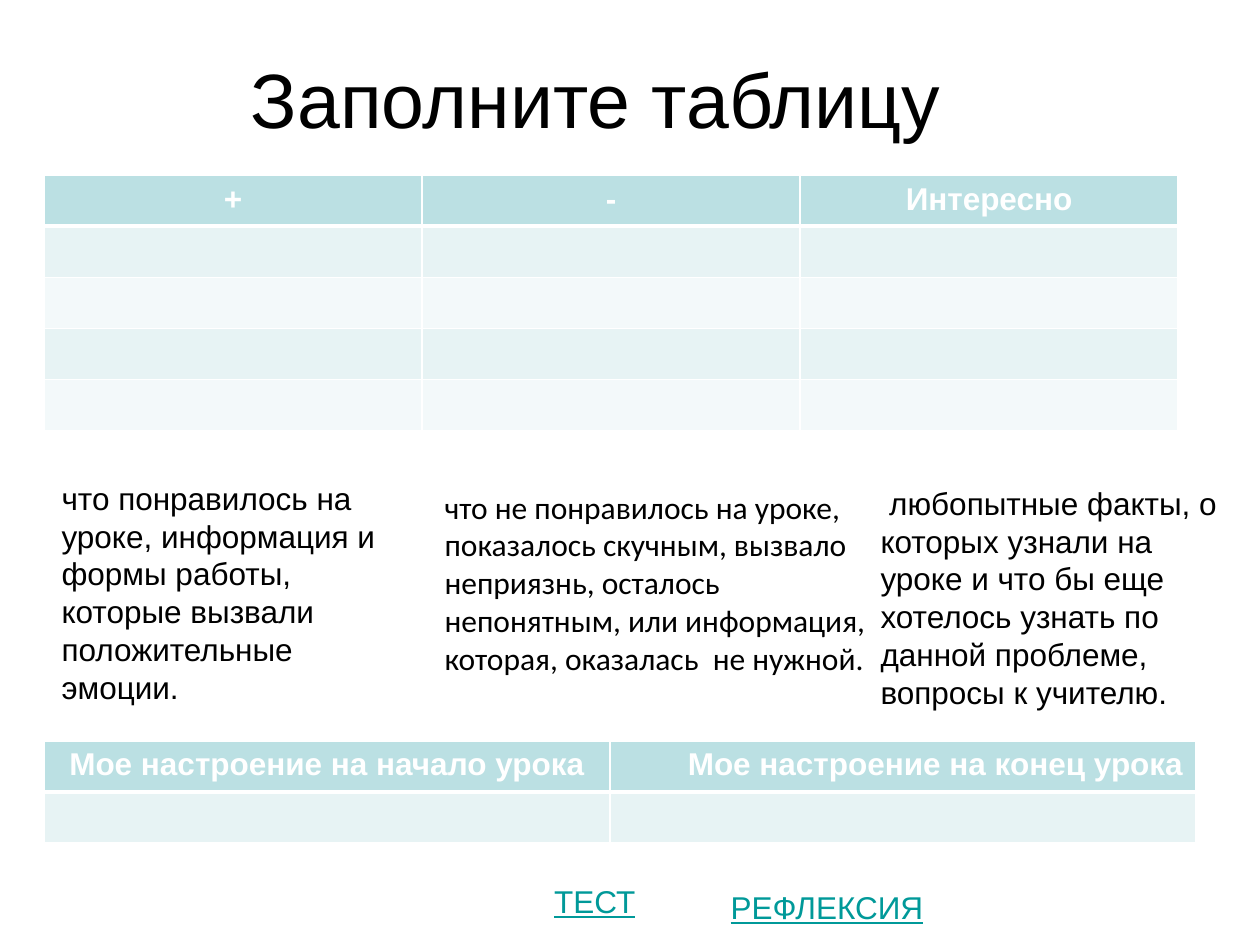
"""Builds a lesson reflection slide with two tables to fill in."""
import pptx
import pptx.util
import pptx.dml.color
import pptx.enum.text
import pptx.oxml
import pptx.oxml.ns

Inches = pptx.util.Inches
ALIGN = pptx.enum.text.PP_ALIGN
ANCHOR = pptx.enum.text.MSO_ANCHOR


def rgb(value):
    return pptx.dml.color.RGBColor.from_string(value)


class Deck:
    font = "Arial"
    size = 18
    text_color = "000000"
    link_color = "009999"
    line_color = "FFFFFF"
    header_fill = "BBE0E3"
    band_fills = ("E7F3F4", "F3F9FA")

    def __init__(self):
        self.prs = pptx.Presentation()
        self.prs.slide_width, self.prs.slide_height = Inches(10), Inches(7.5)
        self.s = self.prs.slides.add_slide(self.prs.slide_layouts[5])

    def style(self, p, color, font=None, size=None, bold=False, underline=False, align=ALIGN.LEFT):
        p.alignment = align
        f = p.font
        f.name, f.size = font or self.font, pptx.util.Pt(size or self.size)
        f.bold, f.underline = bold, underline
        f.color.rgb = rgb(color)

    def title(self, text, x, y, w, h):
        sp = self.s.shapes.title
        sp.left, sp.top, sp.width, sp.height = map(Inches, (x, y, w, h))
        tf = sp.text_frame
        tf.vertical_anchor = ANCHOR.MIDDLE
        tf.auto_size = pptx.enum.text.MSO_AUTO_SIZE.NONE
        tf.text = text
        self.style(tf.paragraphs[0], self.text_color, size=44, align=ALIGN.CENTER)

    def text(self, text, x, y, w, h, font=None):
        tf = self.s.shapes.add_textbox(*map(Inches, (x, y, w, h))).text_frame
        tf.word_wrap = True
        tf.text = text
        self.style(tf.paragraphs[0], self.text_color, font)

    def link(self, text, x, y, w):
        tf = self.s.shapes.add_textbox(*map(Inches, (x, y, w, 0.4))).text_frame
        tf.word_wrap = False
        tf.text = text
        self.style(tf.paragraphs[0], self.link_color, underline=True)

    def borders(self, cell, widths):
        tc_pr = cell._tc.get_or_add_tcPr()
        for side, width in widths.items():
            tc_pr.append(pptx.oxml.parse_xml(
                f'<a:ln{side} {pptx.oxml.ns.nsdecls("a")} w="{pptx.util.Pt(width)}"><a:solidFill>'
                f'<a:srgbClr val="{self.line_color}"/></a:solidFill></a:ln{side}>'))

    def table(self, headers, aligns, x, y, widths, rows, row_h=0.405):
        frame = self.s.shapes.add_table(rows, len(widths), Inches(x), Inches(y),
                                        Inches(sum(widths)), Inches(rows * row_h))
        table = frame.table
        for column, width in zip(table.columns, widths):
            column.width = Inches(width)
        for i, row in enumerate(table.rows):
            row.height = Inches(row_h)
            for j, cell in enumerate(row.cells):
                header = i == 0
                self.borders(cell, {"L": 1, "R": 1, "T": 3 if i == 1 else 1, "B": 3 if header else 1})
                cell.fill.solid()
                cell.fill.fore_color.rgb = rgb(self.header_fill if header else self.band_fills[(i - 1) % 2])
                if header:
                    cell.text = headers[j]
                    self.style(cell.text_frame.paragraphs[0], self.line_color, bold=True, align=aligns[j])


def main():
    deck = Deck()
    deck.title("Заполните таблицу\v", 0.23, 0.52, 9, 1.25)
    deck.table(("+", "-", "Интересно"), (ALIGN.CENTER,) * 3, 0.35, 1.39, (3, 3, 3), 5)
    deck.text("что не понравилось на уроке, показалось скучным, вызвало неприязнь, осталось "
              "непонятным, или информация, которая, оказалась  не нужной.",
              3.43, 3.82, 3.62, 1.62, "Calibri")
    deck.text("что понравилось на уроке, информация и формы работы,  которые вызвали "
              "положительные эмоции.", 0.39, 3.75, 2.99, 1.62)
    deck.text(" любопытные факты, о которых узнали на уроке и что бы еще хотелось узнать "
              "по данной проблеме, вопросы к учителю.", 6.89, 3.79, 2.97, 1.92)
    deck.table(("Мое настроение на начало урока", "Мое настроение на конец урока"),
               (ALIGN.CENTER, ALIGN.RIGHT), 0.35, 5.88, (4.49, 4.65), 2)
    deck.link("ТЕСТ", 4.3, 6.95, 0.85)
    deck.link("РЕФЛЕКСИЯ", 5.7, 7, 1.75)
    deck.prs.save("out.pptx")


if __name__ == "__main__":
    main()
